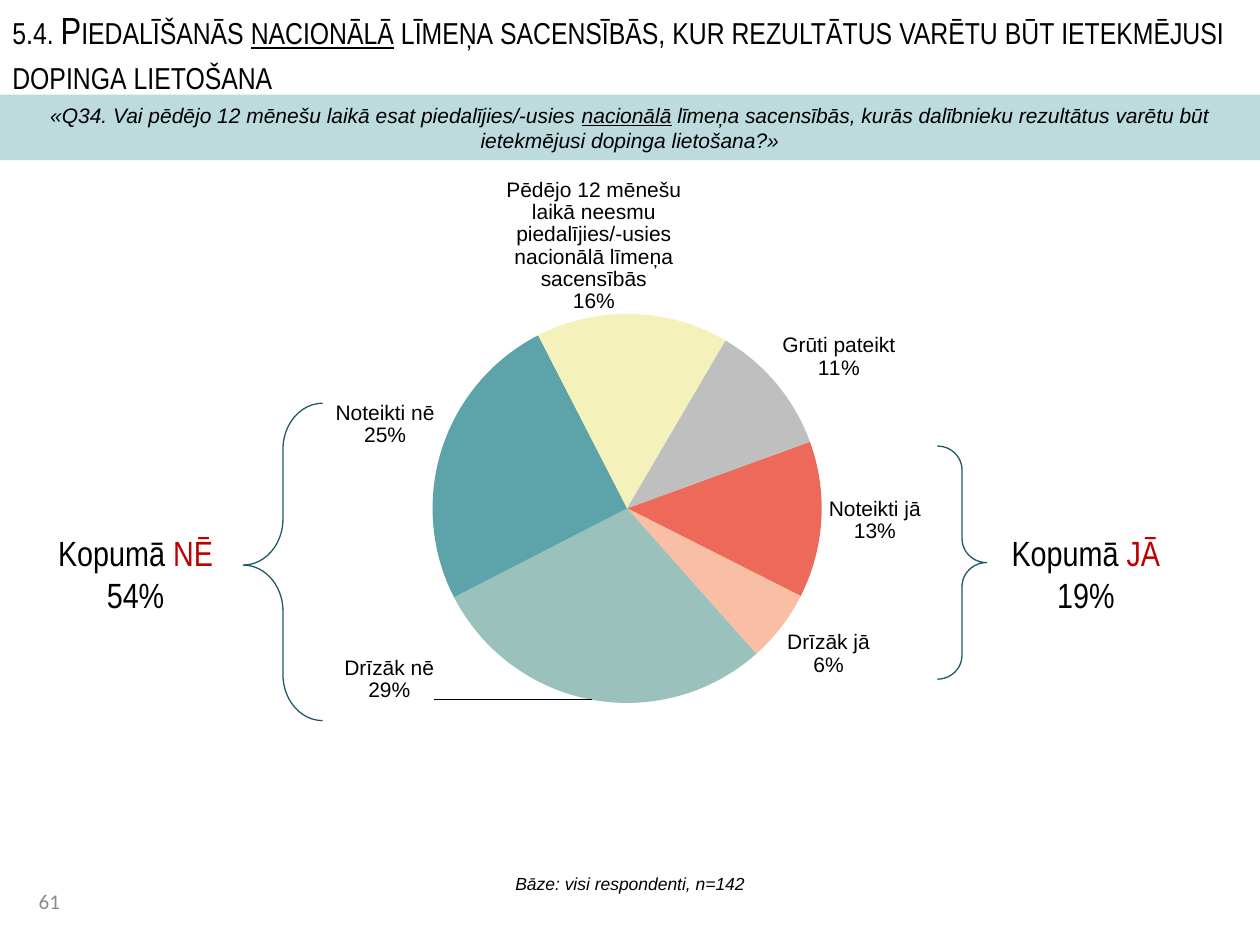
from lxml import etree
from pptx import Presentation
from pptx import util as u
from pptx.chart.data import CategoryChartData
from pptx.dml.color import RGBColor
from pptx.enum import chart as charts, shapes, text
from pptx.oxml import parse_xml
from pptx.oxml.ns import nsdecls, qn

PT = u.Pt
SLICES = [
    ("Noteikti jā", 13, "ED6A5A"),
    ("Drīzāk jā", 6, "F9BFA5"),
    ("Drīzāk nē", 29, "9BC1BC"),
    ("Noteikti nē", 25, "5CA4A9"),
    ("Pēdējo 12 mēnešu laikā neesmu piedalījies/-usies nacionālā līmeņa sacensībās",
     16, "F4F1BB"),
    ("Grūti pateikt", 11, "BFBFBF"),
]
LABEL_SHIFTS = {2: (-0.16, -0.08), 4: (-0.04, 0.01)}


def paint(color_format, hex_color):
    color_format.rgb = RGBColor.from_string(hex_color)


def write(box, paragraphs, size, font="Arial", color="000000", align=None,
          anchor=text.MSO_ANCHOR.TOP, italic=False, small_caps=False):
    """Each paragraph is a list of spans: (words, optional overrides)."""
    frame = box.text_frame
    frame.word_wrap = True
    frame.vertical_anchor = anchor
    for index, spans in enumerate(paragraphs):
        para = frame.add_paragraph() if index else frame.paragraphs[0]
        para.alignment = align
        for words, *overrides in spans:
            look = overrides[0] if overrides else {}
            span = para.add_run()
            span.text = words
            span.font.name = font
            span.font.size = PT(size)
            span.font.italic = italic
            span.font.underline = look.get("underline", False)
            paint(span.font.color, look.get("color", color))
            if small_caps:
                span.font._element.set("cap", "small")


def add_text(page, area, paragraphs, size, **look):
    box = page.shapes.add_textbox(*map(PT, area))
    write(box, paragraphs, size, **look)


def add_banner(page, area, paragraphs, size, fill, opacity, **look):
    band = page.shapes.add_shape(shapes.MSO_SHAPE.RECTANGLE, *map(PT, area))
    band.shadow.inherit = False
    band.fill.solid()
    paint(band.fill.fore_color, fill)
    color = band.fill._xPr.find(qn("a:solidFill"))[0]
    etree.SubElement(color, qn("a:alpha"), val=str(opacity * 1000))
    band.line.fill.background()
    write(band, paragraphs, size, **look)


def add_brace(page, kind, area, adjustments):
    brace = page.shapes.add_shape(kind, *map(PT, area))
    brace.shadow.inherit = False
    brace.fill.background()
    paint(brace.line.color, "215968")
    brace.line.width = PT(0.75)
    for index, value in enumerate(adjustments):
        brace.adjustments[index] = value


def add_total(page, left, answer, share):
    add_text(page, (left, 300, 113, 55.5),
             [[("Kopumā ",), (answer, {"color": "C00000"})], [(share,)]],
             20, font="Arial Narrow", align=text.PP_ALIGN.CENTER)


def place_plot(chart, x, y, width, height):
    layout = parse_xml(
        f'<c:layout {nsdecls("c")}><c:manualLayout><c:layoutTarget val="inner"/>'
        f'<c:xMode val="edge"/><c:yMode val="edge"/><c:x val="{x}"/><c:y val="{y}"/>'
        f'<c:w val="{width}"/><c:h val="{height}"/></c:manualLayout></c:layout>')
    area = chart._chartSpace.chart.plotArea
    for old in area.findall(qn("c:layout")):
        area.remove(old)
    area.insert(0, layout)


def shifted_label(index, x, y):
    return parse_xml(
        f'<c:dLbl {nsdecls("c")}><c:idx val="{index}"/><c:layout><c:manualLayout>'
        f'<c:x val="{x}"/><c:y val="{y}"/></c:manualLayout></c:layout>'
        '<c:numFmt formatCode="0%" sourceLinked="0"/><c:dLblPos val="outEnd"/>'
        '<c:showLegendKey val="0"/><c:showVal val="0"/><c:showCatName val="1"/>'
        '<c:showSerName val="0"/><c:showPercent val="1"/><c:showBubbleSize val="0"/>'
        '<c:separator>\n</c:separator></c:dLbl>')


def add_pie(page, area):
    data = CategoryChartData()
    data.categories = [name for name, _, _ in SLICES]
    data.add_series("Series 1", [value for _, value, _ in SLICES])
    chart = page.shapes.add_chart(charts.XL_CHART_TYPE.PIE, *map(PT, area), data).chart
    chart.has_legend = False
    chart.has_title = False
    chart.font.name = "Arial"
    chart.font.size = PT(12)
    paint(chart.font.color, "000000")
    place_plot(chart, 0.28, 0.24, 0.4, 0.68)

    plot = chart.plots[0]
    plot.vary_by_categories = True
    pie = plot._element
    for old in pie.findall(qn("c:firstSliceAng")):
        pie.remove(old)
    etree.SubElement(pie, qn("c:firstSliceAng"), val="70")

    series = plot.series[0]
    for index, (_, _, color) in enumerate(SLICES):
        fill = series.points[index].format.fill
        fill.solid()
        paint(fill.fore_color, color)

    labels = series.data_labels
    labels.show_value = False
    labels.show_category_name = True
    labels.show_percentage = True
    labels.number_format = "0%"
    labels.number_format_is_linked = False
    labels.position = charts.XL_LABEL_POSITION.OUTSIDE_END
    labels.font.size = PT(12)
    separator = etree.Element(qn("c:separator"))
    separator.text = "\n"
    last_flag = labels._element.findall(qn("c:showBubbleSize")) or \
        labels._element.findall(qn("c:showPercent"))
    last_flag[0].addnext(separator)
    for position, (index, shift) in enumerate(LABEL_SHIFTS.items()):
        labels._element.insert(position, shifted_label(index, *shift))


def main():
    deck = Presentation()
    deck.slide_width, deck.slide_height = PT(720), PT(540)
    page = deck.slides.add_slide(deck.slide_layouts[6])
    center, middle = text.PP_ALIGN.CENTER, text.MSO_ANCHOR.MIDDLE
    underlined = ("nacionālā", {"underline": True})

    add_text(page, (15, 500.5, 76, 28.5), [[("61",)]], 12,
             font="Calibri", color="8C8C8C", anchor=middle)
    add_pie(page, (91.5, 83.5, 556, 357))
    add_text(page, (0, 488, 720, 34), [[("Bāze: visi respondenti, n=142",)]], 10,
             italic=True, align=center, anchor=middle)
    add_banner(page, (0, 54, 720, 37.5),
               [[("«Q34. Vai pēdējo 12 mēnešu laikā esat piedalījies/-usies ",),
                 underlined,
                 (" līmeņa sacensībās, kurās dalībnieku rezultātus varētu būt "
                  "ietekmējusi dopinga lietošana?»",)]],
               12, fill="5CA4A9", opacity=40, italic=True, align=center, anchor=middle)
    add_brace(page, shapes.MSO_SHAPE.LEFT_BRACE, (139, 230.4, 45.4, 181.4), (0.58, 0.51))
    add_total(page, 21, "NĒ", "54%")
    add_brace(page, shapes.MSO_SHAPE.RIGHT_BRACE, (535.7, 254.9, 28.1, 133.2), (0.49, 0.5))
    add_total(page, 564, "JĀ", "19%")
    add_text(page, (0, 0, 720, 59),
             [[("5.4. Piedalīšanās ",), underlined,
               (" līmeņa sacensībās, kur rezultātus varētu būt ietekmējusi "
                "dopinga lietošana",)]],
             21.6, font="Arial Narrow", anchor=middle, small_caps=True)
    deck.save("out.pptx")


if __name__ == "__main__":
    main()
